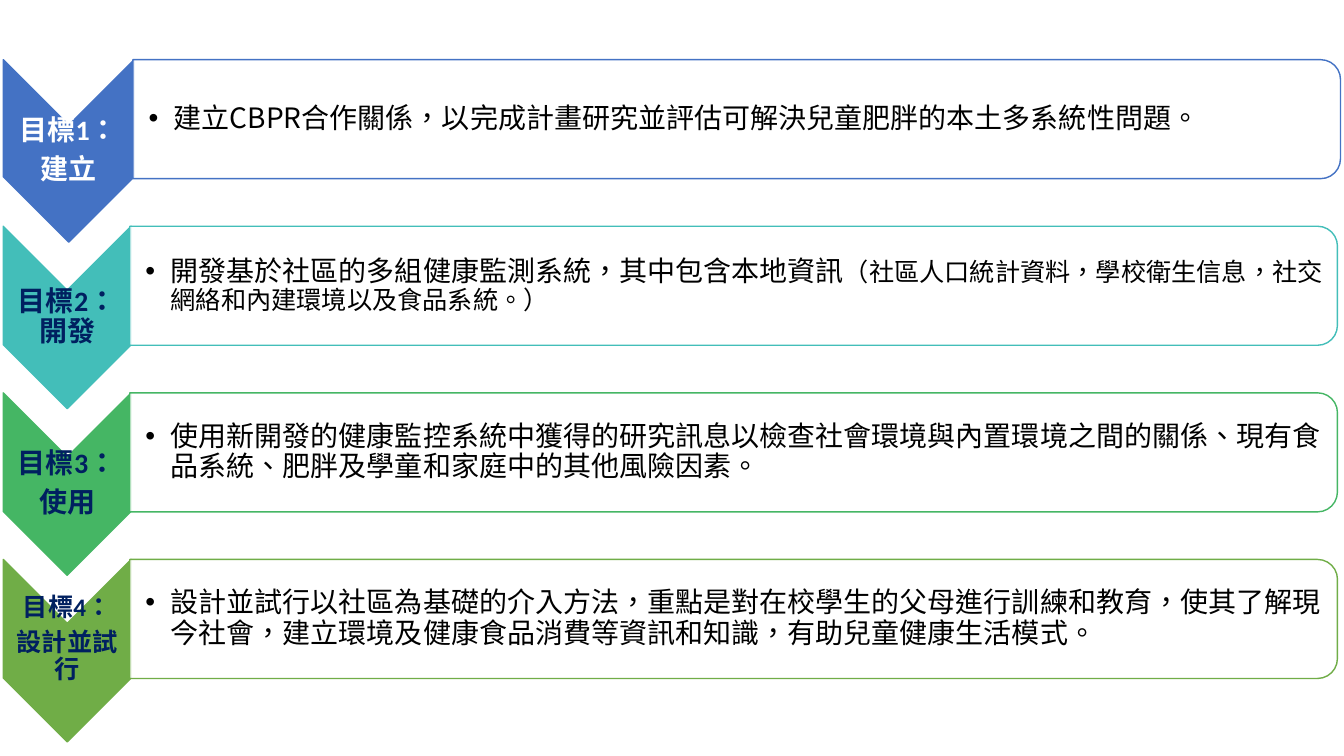
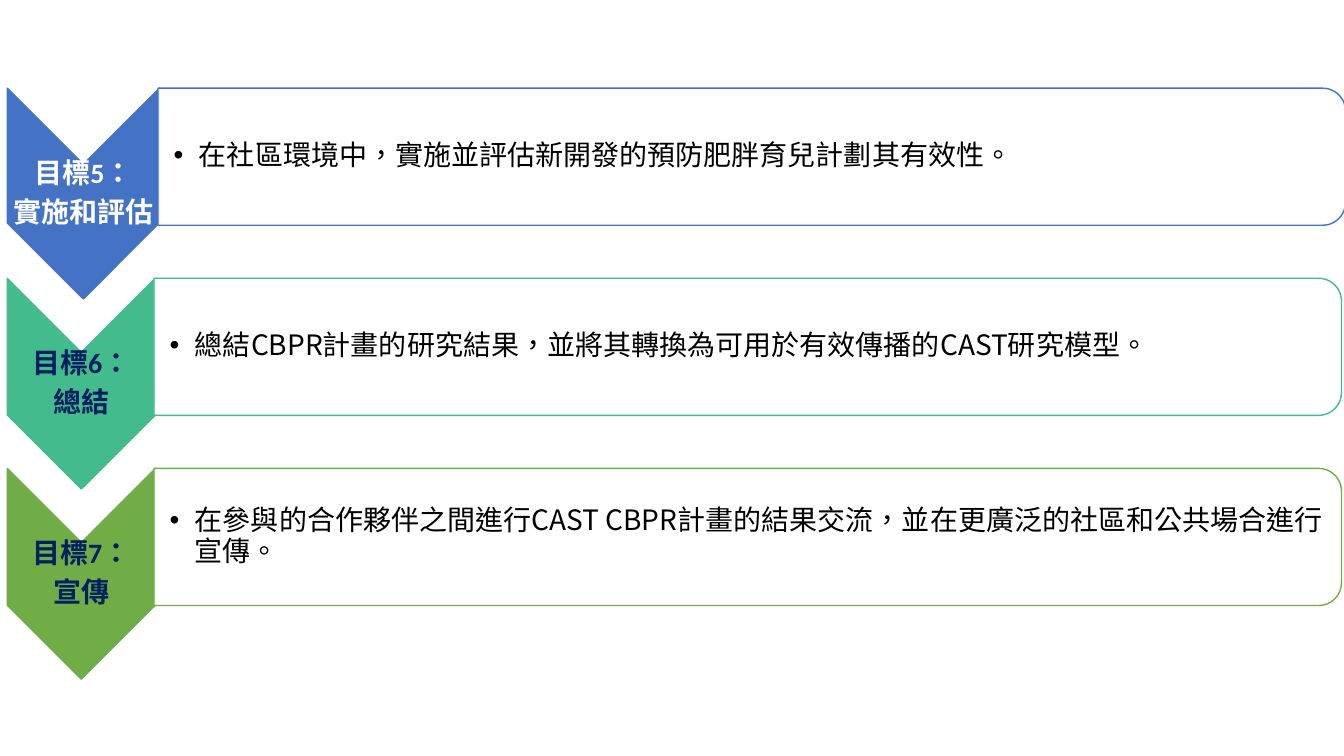
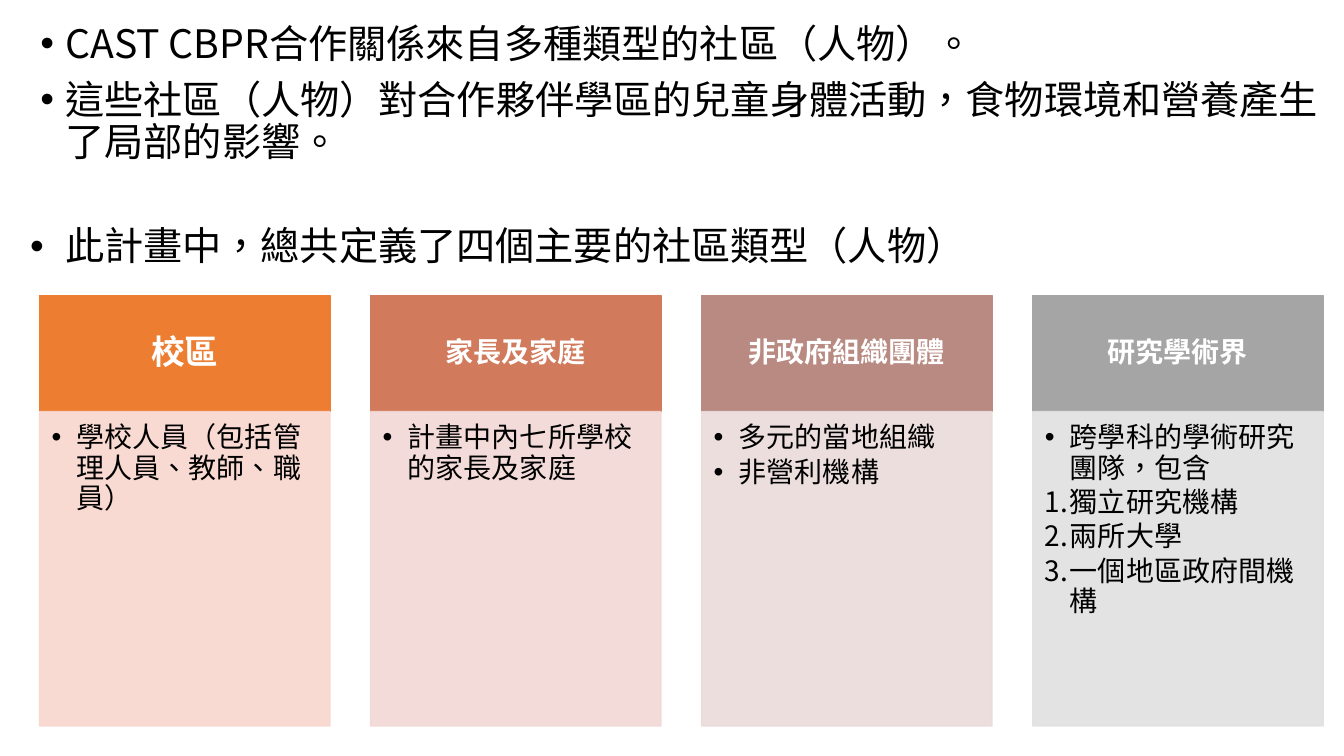
from dataclasses import dataclass

from lxml import etree
from pptx import Presentation
from pptx.dml.color import RGBColor
from pptx.enum.shapes import MSO_SHAPE
from pptx.enum.text import MSO_ANCHOR, MSO_AUTO_SIZE, PP_ALIGN
from pptx.oxml.ns import qn
from pptx.util import Pt

CHEVRON, RECT = MSO_SHAPE.CHEVRON, MSO_SHAPE.RECTANGLE
ROUND_SIDE = MSO_SHAPE.ROUND_2_SAME_RECTANGLE
TOP, MIDDLE = MSO_ANCHOR.TOP, MSO_ANCHOR.MIDDLE
LEFT, CENTER = PP_ALIGN.LEFT, PP_ALIGN.CENTER
FIXED = MSO_AUTO_SIZE.NONE


@dataclass(frozen=True)
class Theme:
    white: str = "FFFFFF"
    black: str = "000000"
    navy: str = "002060"
    blue: str = "4472C4"
    turquoise: str = "43BEB9"
    emerald: str = "45B664"
    mint: str = "43BB8D"
    green: str = "70AD47"
    label_font: str = "Calibri"
    body_font: str = "Noto Sans CJK SC"
    small: int = 18
    normal: int = 20
    large: int = 24
    intro: int = 28
    line_spacing: float = 0.9
    label_gap: float = 0.31
    list_gap: float = 0.15
    intro_gap: int = 10
    indent: int = 18
    opacity: int = 90


theme = Theme()


def add_block(slide, preset, left, top, width, height, fill, line, turned=False, faded=False):
    """Place a filled shape; a turned one ends up in the given box after a 90 degree rotation."""
    if turned:
        left, top = left + (width - height) / 2, top + (height - width) / 2
        width, height = height, width
    block = slide.shapes.add_shape(preset, Pt(left), Pt(top), Pt(width), Pt(height))
    block.rotation = 90 if turned else 0
    block.shadow.inherit = False
    block.fill.solid()
    block.fill.fore_color.rgb = RGBColor.from_string(fill)
    block.line.color.rgb = RGBColor.from_string(line)
    block.line.width = Pt(1)
    if faded:
        for color in block._element.spPr.iter(qn("a:srgbClr")):
            if color.get("val") == fill:
                etree.SubElement(color, qn("a:alpha"), val=str(theme.opacity * 1000))
    return block


def write(frame, paragraphs, color, font=theme.body_font, bold=False, anchor=TOP,
          insets=(7.2, 3.6, 7.2, 3.6), before=0, gap=0, indent=theme.indent):
    """Fill a frame with (marker, [(text, size), ...]) paragraphs; no marker means centred."""
    frame.word_wrap = True
    frame.auto_size = FIXED
    frame.vertical_anchor = anchor
    frame.margin_left, frame.margin_top, frame.margin_right, frame.margin_bottom = map(Pt, insets)
    for number, (marker, runs) in enumerate(paragraphs):
        paragraph = frame.add_paragraph() if number else frame.paragraphs[0]
        paragraph.alignment = LEFT if marker else CENTER
        paragraph.line_spacing = theme.line_spacing
        paragraph.space_before = Pt(before)
        paragraph.space_after = Pt(gap * runs[0][1])
        if marker:
            props = paragraph._p.get_or_add_pPr()
            props.set("marL", str(Pt(indent)))
            props.set("indent", str(-Pt(indent)))
            if marker == "1.":
                etree.SubElement(props, qn("a:buAutoNum"), type="arabicPeriod")
            else:
                etree.SubElement(props, qn("a:buFont"), typeface="Arial")
                etree.SubElement(props, qn("a:buChar"), char=marker)
        for text, size in runs:
            run = paragraph.add_run()
            run.text = text
            run.font.size = Pt(size)
            run.font.bold = bold
            run.font.name = font
            run.font.color.rgb = RGBColor.from_string(color)
            run_props = run._r.get_or_add_rPr()
            run_props.set("lang", "zh-TW")
            etree.SubElement(run_props, qn("a:ea"), typeface=theme.body_font)


deck = Presentation()
deck.slide_width, deck.slide_height = Pt(960), Pt(540)
content_layout, blank_layout = deck.slide_layouts[1], deck.slide_layouts[6]

# Slides 1 and 2: goals, as (accent, label lines, label size, description runs)
first_goals = [
    (theme.blue, ["目標1：", "建立"], theme.normal,
     [("建立CBPR合作關係，以完成計畫研究並評估可解決兒童肥胖的本土多系統性問題。", theme.normal)]),
    (theme.turquoise, ["目標2：開發"], theme.normal,
     [("開發基於社區的多組健康監測系統，其中包含本地資訊", theme.normal),
      ("（社區人口統計資料，學校衛生信息，社交網絡和內建環境以及食品系統。）", theme.small)]),
    (theme.emerald, ["目標3：", "使用"], theme.normal,
     [("使用新開發的健康監控系統中獲得的研究訊息以檢查社會環境與內置環境之間的關係、"
       "現有食品系統、肥胖及學童和家庭中的其他風險因素。", theme.normal)]),
    (theme.green, ["目標4：", "設計並試行"], theme.small,
     [("設計並試行以社區為基礎的介入方法，重點是對在校學生的父母進行訓練和教育，"
       "使其了解現今社會，建立環境及健康食品消費等資訊和知識，有助兒童健康生活模式。", theme.normal)]),
]
later_goals = [
    (theme.blue, ["目標5：", "實施和評估"], theme.normal,
     [("在社區環境中，實施並評估新開發的預防肥胖育兒計劃其有效性。", theme.normal)]),
    (theme.mint, ["目標6：", "總結"], theme.normal,
     [("總結CBPR計畫的研究結果，並將其轉換為可用於有效傳播的CAST研究模型。", theme.normal)]),
    (theme.green, ["目標7：", "宣傳"], theme.normal,
     [("在參與的合作夥伴之間進行CAST CBPR計畫的結果交流，並在更廣泛的社區和公共場合進行宣傳。",
       theme.normal)]),
]
# goals, left, top, row pitch, chevron widths (first row, others), chevron height,
# panel width and height, description width
goal_slides = [
    (first_goals, 2.3, 42.6, 119, (93.6, 91.4), 130.3, 862.6, 85, 858.2),
    (later_goals, 5.2, 63, 135.8, (108.7, 105.8), 150.5, 848.2, 97.9, 843.1),
]
label_height = 40
for (goals, left, top, pitch, chevron_widths, chevron_height,
     panel_width, panel_height, description_width) in goal_slides:
    slide = deck.slides.add_slide(blank_layout)
    for row, (accent, label_lines, label_size, description) in enumerate(goals):
        row_top = top + row * pitch
        chevron_width = chevron_widths[min(row, 1)]
        panel_left = left + chevron_width - 1

        # Chevron and its label; the small label sits higher
        add_block(slide, CHEVRON, left, row_top, chevron_width, chevron_height,
                  accent, accent, turned=True)
        lift = 8 if label_size == theme.small else 0
        label_top = row_top + (chevron_height - label_height) / 2 - lift
        label = slide.shapes.add_textbox(Pt(left), Pt(label_top), Pt(chevron_width), Pt(label_height))
        write(label.text_frame, [(None, [(line, label_size)]) for line in label_lines],
              theme.navy if row else theme.white, font=theme.label_font, bold=True,
              anchor=MIDDLE, insets=(0.7,) * 4, gap=theme.label_gap)

        # Panel and its description
        add_block(slide, ROUND_SIDE, panel_left, row_top, panel_width, panel_height,
                  theme.white, accent, turned=True, faded=True)
        detail = slide.shapes.add_textbox(Pt(panel_left), Pt(row_top),
                                          Pt(description_width), Pt(panel_height))
        write(detail.text_frame, [("•", description)], theme.black, anchor=MIDDLE,
              insets=(11.2, 0.7, 0.7, 0.7), gap=theme.list_gap)

# Slide 3: introduction
slide = deck.slides.add_slide(content_layout)
unused_title = slide.shapes.title._element
unused_title.getparent().remove(unused_title)
intro = slide.placeholders[1]
intro.left, intro.top, intro.width, intro.height = Pt(21.6), Pt(13.7), Pt(932.4), Pt(130)
write(intro.text_frame, [
    ("•", [("CAST CBPR合作關係來自多種類型的社區（人物）。", theme.intro)]),
    ("•", [("這些社區（人物）對合作夥伴學區的兒童身體活動，食物環境和營養產生了局部的影響。",
            theme.intro)]),
], theme.black, before=theme.intro_gap)
summary = slide.shapes.add_textbox(Pt(14.4), Pt(158.5), Pt(801), Pt(38))
write(summary.text_frame, [("•", [("此計畫中，總共定義了四個主要的社區類型（人物）", theme.intro)])],
      theme.black, indent=25)

# Slide 3: community columns, as (heading, size, heading fill, body fill, items)
communities = [
    ("校區", theme.large, "ED7D31", "F8D7CE", [("•", "學校人員（包括管理人員、教師、職員）")]),
    ("家長及家庭", theme.normal, "D17B5C", "F1D8D4", [("•", "計畫中內七所學校的家長及家庭")]),
    ("非政府組織團體", theme.normal, "B98A82", "E9DBDA",
     [("•", "多元的當地組織"), ("•", "非營利機構")]),
    ("研究學術界", theme.normal, "A5A5A5", "E1E1E1",
     [("•", "跨學科的學術研究團隊，包含"), ("1.", "獨立研究機構"),
      ("1.", "兩所大學"), ("1.", "一個地區政府間機構")]),
]
column_width, column_pitch = 207.4, 236.5
heading_top, heading_height, members_height = 211, 83, 224.6
for column, (title, size, heading_fill, members_fill, items) in enumerate(communities):
    column_left = 28.2 + column * column_pitch
    heading = add_block(slide, RECT, column_left, heading_top, column_width, heading_height,
                        heading_fill, heading_fill)
    write(heading.text_frame, [(None, [(title, size)])], theme.white, bold=True, anchor=MIDDLE)
    members = add_block(slide, RECT, column_left, heading_top + heading_height, column_width,
                        members_height, members_fill, members_fill, faded=True)
    write(members.text_frame, [(marker, [(text, theme.normal)]) for marker, text in items],
          theme.black, insets=(8.6, 8.6, 11.5, 12.2), gap=theme.list_gap)

deck.save("out.pptx")
